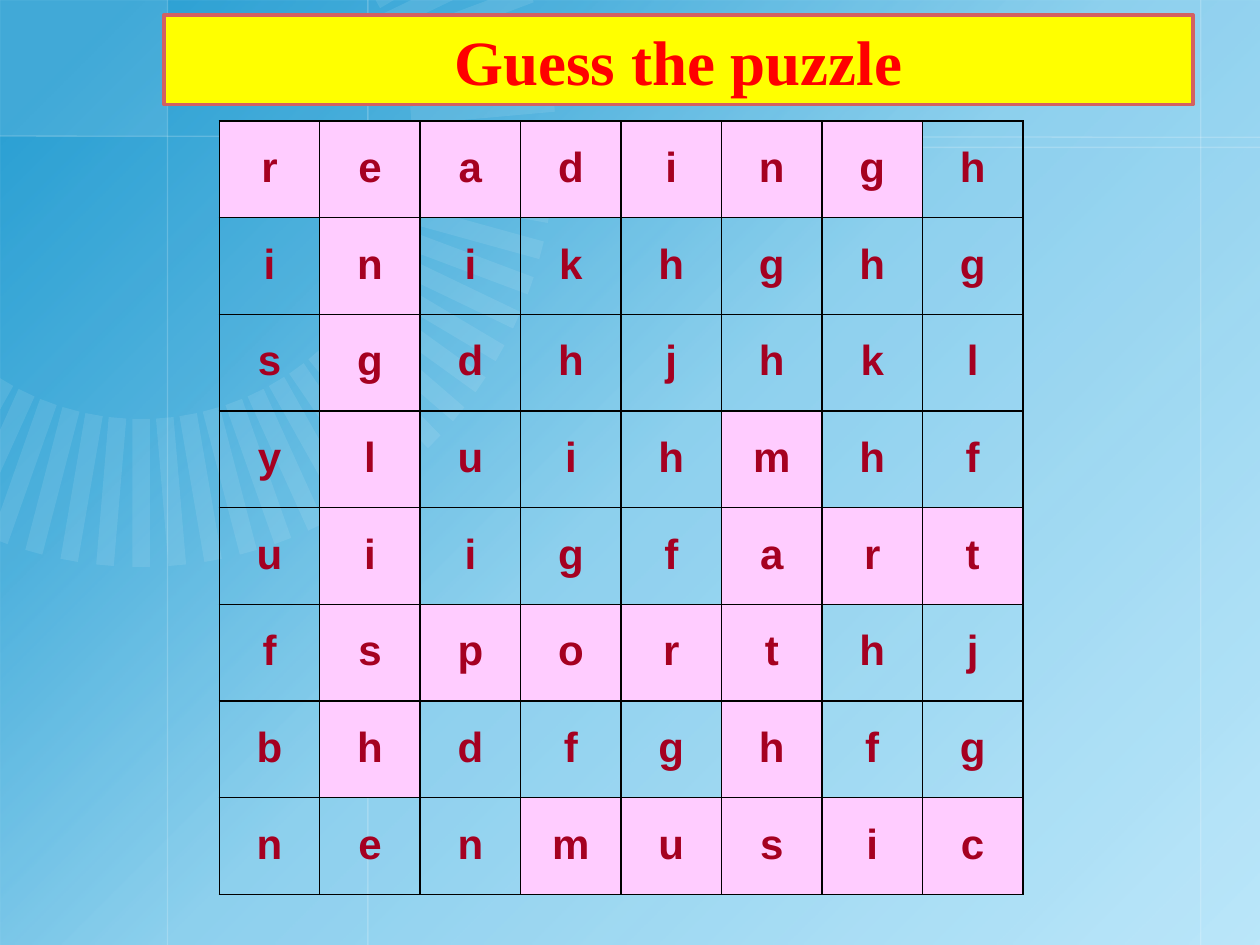
from dataclasses import dataclass
from math import cos, radians, sin

from lxml.etree import SubElement
from pptx import Presentation
from pptx.dml.color import RGBColor
from pptx.enum.shapes import MSO_CONNECTOR, MSO_SHAPE
from pptx.enum.text import MSO_ANCHOR, MSO_AUTO_SIZE, PP_ALIGN
from pptx.oxml import parse_xml
from pptx.oxml.ns import nsdecls, qn
from pptx.util import Inches, Pt


@dataclass(frozen=True)
class Theme:
    sky: str = "BCE7FA"
    deep_blue: str = "0F92CC"
    white: str = "FFFFFF"
    ray: str = "F2FAFE"
    yellow: str = "FFFF00"
    title_border: str = "D36161"
    title_text: str = "FF0000"
    found: str = "FFCCFF"
    letter: str = "A50021"
    grid: str = "000000"
    title_font: str = "Times New Roman"
    letter_font: str = "Arial"
    title_size: int = 36
    letter_size: int = 24


THEME = Theme()

LETTERS = ["readingh", "inikhghg", "sgdhjhkl", "yluihmhf",
           "uiigfart", "fsporthj", "bhdfghfg", "nenmusic"]

# Hidden words: row, column, row step, column step
WORDS = {
    "reading": (0, 0, 0, 1),
    "english": (0, 1, 1, 0),
    "maths": (3, 5, 1, 0),
    "art": (4, 5, 0, 1),
    "sport": (5, 1, 0, 1),
    "music": (7, 3, 0, 1),
}

# Background gradient: position and opacity, in percent
GRADIENT = [(6, 83), (26, 63), (50, 27), (100, 0)]

# Ray angles that the title and the top row of the table cover completely
COVERED_RAYS = (-15, -10, 0, 5)


def color(value):
    return RGBColor.from_string(value)


def set_opacity(fill, percent):
    """Make a solid fill see-through."""
    choice = fill.fore_color._xFill
    SubElement(choice[0], qn("a:alpha"), val=str(percent * 1000))


def fill_plain(shape, value, opacity):
    shape.shadow.inherit = False
    shape.line.fill.background()
    shape.fill.solid()
    shape.fill.fore_color.rgb = color(value)
    set_opacity(shape.fill, opacity)


def add_gradient(slide, left, top, width, height):
    shape = slide.shapes.add_shape(MSO_SHAPE.RECTANGLE, Inches(left), Inches(top),
                                   Inches(width), Inches(height))
    shape.shadow.inherit = False
    shape.line.fill.background()
    stops = "".join(
        f'<a:gs pos="{position * 1000}"><a:srgbClr val="{THEME.deep_blue}">'
        f'<a:alpha val="{opacity * 1000}"/></a:srgbClr></a:gs>'
        for position, opacity in GRADIENT)
    gradient = parse_xml(f'<a:gradFill {nsdecls("a")} rotWithShape="1"><a:gsLst>{stops}'
                         '</a:gsLst><a:lin ang="2700000" scaled="0"/></a:gradFill>')
    shape._element.spPr.find(qn("a:prstGeom")).addnext(gradient)


def add_guide(slide, x1, y1, x2, y2):
    line = slide.shapes.add_connector(MSO_CONNECTOR.STRAIGHT, Inches(x1), Inches(y1),
                                      Inches(x2), Inches(y2))
    line.line.width = Pt(0.75)
    line.line.color.rgb = color(THEME.white)
    set_opacity(line.line.fill, 20)
    SubElement(line._element.spPr, qn("a:effectLst"))


def clip_at_zero(points, axis):
    """Cut away the part of a polygon with negative x (axis 0) or y (axis 1)."""
    kept = []
    for start, end in zip(points, points[1:] + points[:1]):
        if start[axis] >= 0:
            kept.append(start)
        if (start[axis] >= 0) != (end[axis] >= 0):
            share = start[axis] / (start[axis] - end[axis])
            kept.append(tuple(a + share * (b - a) for a, b in zip(start, end)))
    return kept


def add_ray_ring(slide, center_x, center_y, inner, outer, half_width, stretch):
    """Rays every five degrees, cut off at the slide's edges."""
    for degrees in range(-30, 125, 5):
        if degrees in COVERED_RAYS:
            continue
        angle = radians(degrees)
        corners = [(inner, -half_width), (outer, -half_width),
                   (outer, half_width), (inner, half_width)]
        points = [(center_x + along * cos(angle) - across * sin(angle),
                   center_y + stretch * (along * sin(angle) + across * cos(angle)))
                  for along, across in corners]
        points = clip_at_zero(clip_at_zero(points, 0), 1)
        points = [(Inches(x), Inches(y)) for x, y in points]
        builder = slide.shapes.build_freeform(*points[0])
        builder.add_line_segments(points[1:], close=True)
        fill_plain(builder.convert_to_shape(), THEME.ray, 10)


def add_backdrop(slide, width, height):
    slide.background.fill.solid()
    slide.background.fill.fore_color.rgb = color(THEME.sky)
    add_gradient(slide, 0, 0, width, height)
    corner = slide.shapes.add_shape(MSO_SHAPE.RECTANGLE, 0, 0, Inches(1.33), Inches(1.08))
    fill_plain(corner, THEME.white, 10)
    for x in (1.33, 9.53, 2.92):
        add_guide(slide, x, 0, x, height)
    add_guide(slide, 0, 1.08, width, 1.09)
    add_guide(slide, 6.33, 1.17, width, 1.17)
    add_ray_ring(slide, 1.12, 1.11, inner=2.15, outer=3.29, half_width=0.07, stretch=1.03)


def add_cell_borders(cell):
    properties = cell._tc.get_or_add_tcPr()
    for side in ("lnL", "lnR", "lnT", "lnB"):
        properties.append(parse_xml(
            f'<a:{side} {nsdecls("a")} w="{Pt(1)}"><a:solidFill>'
            f'<a:srgbClr val="{THEME.grid}"/></a:solidFill></a:{side}>'))


def add_puzzle(slide, left, top, width, height):
    found = {(row + i * down, column + i * right)
             for word, (row, column, down, right) in WORDS.items()
             for i in range(len(word))}
    count = len(LETTERS)
    table = slide.shapes.add_table(count, count, Inches(left), Inches(top),
                                   Inches(width), Inches(height)).table
    table.first_row = table.horz_banding = False
    for i in range(count):
        table.columns[i].width = Inches(width / count)
        table.rows[i].height = Inches(height / count)
    for row, line in enumerate(LETTERS):
        for column, letter in enumerate(line):
            cell = table.cell(row, column)
            cell.margin_left = cell.margin_right = Inches(0.07)
            cell.margin_top = cell.margin_bottom = 0
            add_cell_borders(cell)
            if (row, column) in found:
                cell.fill.solid()
                cell.fill.fore_color.rgb = color(THEME.found)
            else:
                cell.fill.background()
            cell.text = letter
            paragraph = cell.text_frame.paragraphs[0]
            paragraph.line_spacing = 1.5
            format_paragraph(paragraph, THEME.letter_font, THEME.letter_size, THEME.letter)


def format_paragraph(paragraph, name, size, value):
    paragraph.alignment = PP_ALIGN.CENTER
    paragraph.font.name = name
    paragraph.font.size = Pt(size)
    paragraph.font.bold = True
    paragraph.font.color.rgb = color(value)


def add_title(slide, text, left, top, width, height):
    title = slide.shapes.title
    title.left, title.top = Inches(left), Inches(top)
    title.width, title.height = Inches(width), Inches(height)
    title.fill.solid()
    title.fill.fore_color.rgb = color(THEME.yellow)
    title.line.color.rgb = color(THEME.title_border)
    title.line.width = Pt(2)
    frame = title.text_frame
    frame.text = text
    frame.auto_size = MSO_AUTO_SIZE.NONE
    frame.vertical_anchor = MSO_ANCHOR.MIDDLE
    format_paragraph(frame.paragraphs[0], THEME.title_font, THEME.title_size, THEME.title_text)
    # Bring the title in front of the backdrop
    slide.shapes._spTree.append(title._element)


def main():
    presentation = Presentation()
    presentation.slide_width, presentation.slide_height = Inches(10), Inches(7.5)
    slide = presentation.slides.add_slide(presentation.slide_layouts[5])
    add_backdrop(slide, 10, 7.5)
    add_puzzle(slide, 1.74, 0.96, 6.38, 6.14)
    add_title(slide, "Guess the puzzle", 1.3, 0.12, 8.17, 0.71)
    presentation.save("out.pptx")


if __name__ == "__main__":
    main()
